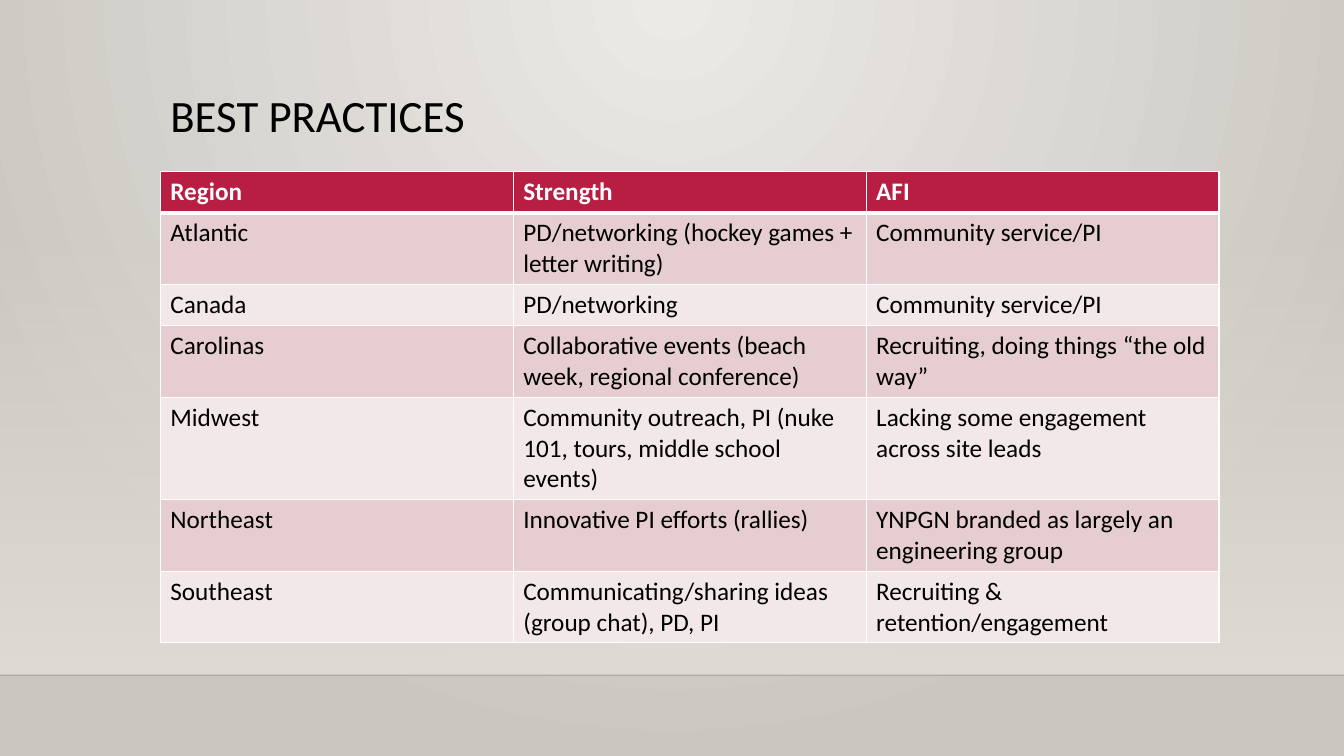
from dataclasses import dataclass
from typing import NamedTuple

from lxml import etree
from pptx import Presentation
from pptx.dml.color import RGBColor
from pptx.dml.fill import FillFormat
from pptx.enum.shapes import MSO_CONNECTOR, MSO_SHAPE
from pptx.enum.text import MSO_ANCHOR, PP_ALIGN
from pptx.oxml.ns import qn
from pptx.slide import Slide
from pptx.table import _Cell
from pptx.util import Inches, Pt

RECTANGLE = MSO_SHAPE.RECTANGLE
STRAIGHT = MSO_CONNECTOR.STRAIGHT
TOP = MSO_ANCHOR.TOP
LEFT = PP_ALIGN.LEFT
TITLE_ONLY = 5

WIDTH, HEIGHT = Inches(13.33), Inches(7.5)
MARGIN = Inches(1.59)
COLUMN, ROW = Inches(3.5), Inches(0.41)
HORIZON = Inches(6.7)


@dataclass(frozen=True)
class Theme:
    font: str = "Calibri"
    title_size: int = 32
    table_size: int = 18
    rule: int = 1
    header_rule: int = 3
    text: str = "000000"
    white: str = "FFFFFF"
    header: str = "B71E42"
    bands: tuple[str, str] = ("E6CDCF", "F3E8E9")
    background: tuple[str, str] = ("ECEAE7", "CAC7C1")
    wall: str = "DFDBD5"


class Practice(NamedTuple):
    region: str
    strength: str
    improvement: str


THEME = Theme()
PRACTICES = [
    Practice("Region", "Strength", "AFI"),
    Practice("Atlantic", "PD/networking (hockey games + letter writing)", "Community service/PI"),
    Practice("Canada", "PD/networking", "Community service/PI"),
    Practice("Carolinas", "Collaborative events (beach week, regional conference)",
             "Recruiting, doing things “the old way”"),
    Practice("Midwest", "Community outreach, PI (nuke 101, tours, middle school events)",
             "Lacking some engagement across site leads"),
    Practice("Northeast", "Innovative PI efforts (rallies)",
             "YNPGN branded as largely an engineering group"),
    Practice("Southeast", "Communicating/sharing ideas (group chat), PD, PI",
             "Recruiting & retention/engagement"),
]


def set_format(target: object, values: dict[str, object]) -> None:
    for name, value in values.items():
        setattr(target, name, value)


def set_font(font: object, size: int, color: str, bold: bool = False) -> None:
    set_format(font, {"name": THEME.font, "size": Pt(size), "bold": bold})
    font.color.rgb = RGBColor.from_string(color)


def set_gradient(fill: FillFormat, colors: tuple[str, str]) -> None:
    fill.gradient()
    for stop, color in zip(fill.gradient_stops, colors):
        stop.color.rgb = RGBColor.from_string(color)


def set_alpha(color: etree._Element, percent: int) -> None:
    etree.SubElement(color, qn("a:alpha"), val=str(percent * 1000))


def draw_background(slide: Slide) -> None:
    """Spread the gradient in circles from the middle of the top edge."""
    set_gradient(slide.background.fill, THEME.background)
    linear = slide.element.xpath(".//p:bg//a:lin")[0]
    circle = etree.Element(qn("a:path"), path="circle")
    etree.SubElement(circle, qn("a:fillToRect"), l="43000", t="0", r="43000", b="100000")
    linear.getparent().replace(linear, circle)


def draw_wall(slide: Slide) -> None:
    """Fade in the wall down to the horizon line."""
    top = Inches(2.21)
    wall = slide.shapes.add_shape(RECTANGLE, 0, top, WIDTH, HORIZON - top)
    wall.shadow.inherit = False
    wall.line.fill.background()
    set_gradient(wall.fill, (THEME.wall, THEME.wall))
    wall.fill.gradient_angle = 270
    set_alpha(wall.element.xpath(".//a:gs/a:srgbClr")[0], 0)

    horizon = slide.shapes.add_connector(STRAIGHT, 0, HORIZON, WIDTH, HORIZON)
    horizon.line.width = Pt(THEME.rule)
    horizon.line.color.rgb = RGBColor.from_string(THEME.text)
    set_alpha(horizon.element.xpath(".//a:ln//a:srgbClr")[0], 20)
    etree.SubElement(horizon.element.spPr, qn("a:effectLst"))


def draw_title(slide: Slide, text: str) -> None:
    title = slide.shapes.title
    set_format(title, {"left": MARGIN, "top": Inches(0.88),
                       "width": 3 * COLUMN, "height": Inches(1.15)})
    frame = title.text_frame
    frame.text = text
    set_format(frame, {"vertical_anchor": TOP, "word_wrap": True})
    paragraph = frame.paragraphs[0]
    set_format(paragraph, {"alignment": LEFT, "line_spacing": 0.9})
    set_font(paragraph.font, THEME.title_size, THEME.text)


def set_borders(cell: _Cell, top: int, bottom: int) -> None:
    properties = cell._tc.get_or_add_tcPr()
    widths = {"a:lnL": THEME.rule, "a:lnR": THEME.rule, "a:lnT": top, "a:lnB": bottom}
    for index, (side, width) in enumerate(widths.items()):
        border = etree.Element(qn(side), w=str(Pt(width)))
        fill = etree.SubElement(border, qn("a:solidFill"))
        etree.SubElement(fill, qn("a:srgbClr"), val=THEME.white)
        properties.insert(index, border)


def draw_table(slide: Slide, practices: list[Practice]) -> None:
    columns, rows = len(Practice._fields), len(practices)
    table = slide.shapes.add_table(rows, columns, MARGIN, Inches(1.7),
                                   columns * COLUMN, rows * ROW).table
    for row, practice in enumerate(practices):
        header = row == 0
        background = THEME.header if header else THEME.bands[(row - 1) % 2]
        color = THEME.white if header else THEME.text
        for column, text in enumerate(practice):
            cell = table.cell(row, column)
            cell.text = text
            set_font(cell.text_frame.paragraphs[0].font, THEME.table_size, color, header)
            cell.fill.solid()
            cell.fill.fore_color.rgb = RGBColor.from_string(background)
            set_borders(cell, top=THEME.header_rule if row == 1 else THEME.rule,
                        bottom=THEME.header_rule if header else THEME.rule)


def main() -> None:
    presentation = Presentation()
    set_format(presentation, {"slide_width": WIDTH, "slide_height": HEIGHT})
    slide = presentation.slides.add_slide(presentation.slide_layouts[TITLE_ONLY])
    draw_background(slide)
    draw_wall(slide)
    draw_title(slide, "BEST PRACTICES")
    draw_table(slide, PRACTICES)
    presentation.save("out.pptx")


if __name__ == "__main__":
    main()
